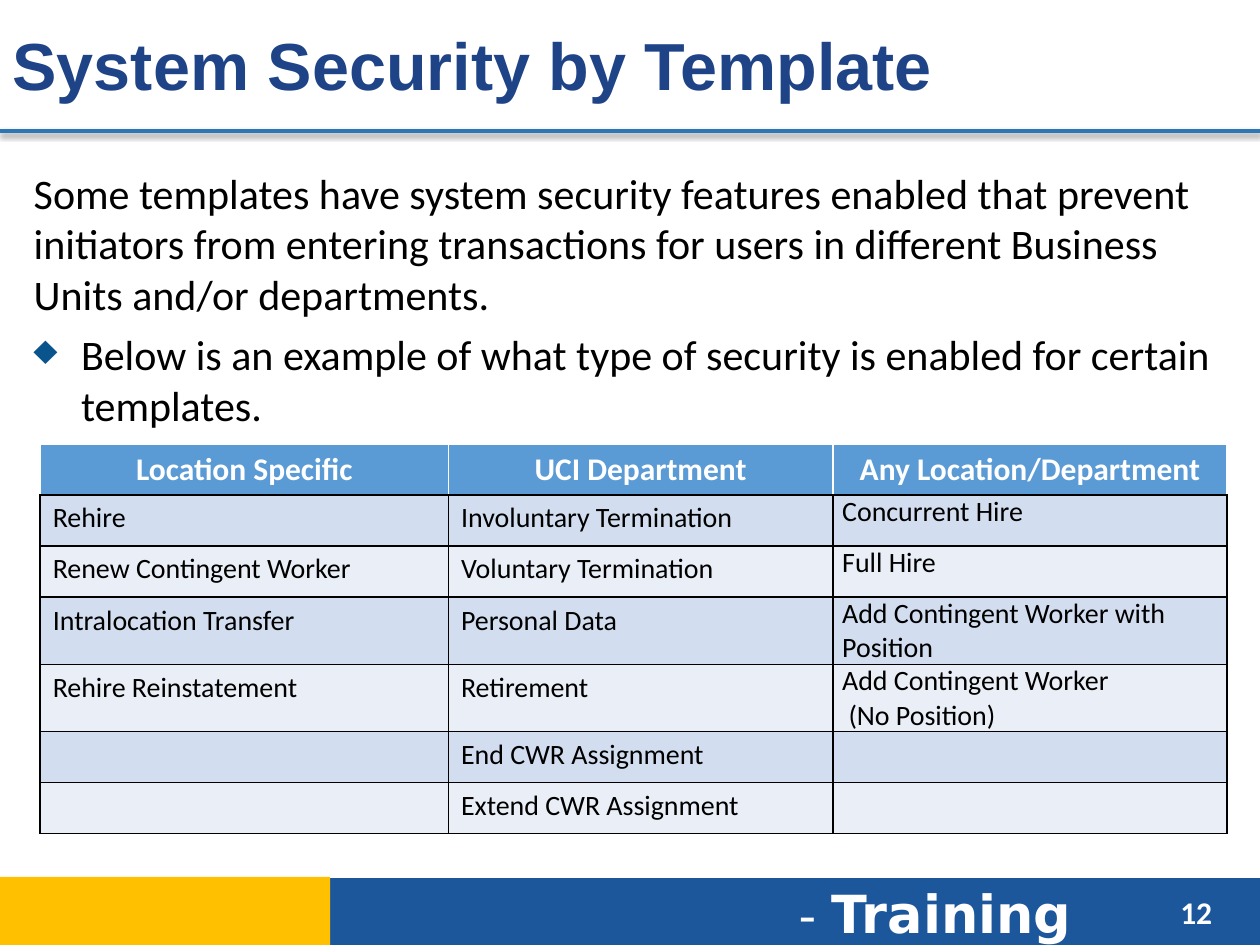
import pptx
import pptx.util
import pptx.dml.color
import pptx.enum.shapes
import pptx.enum.text
import pptx.oxml
import pptx.oxml.ns

Pt = pptx.util.Pt
ALIGN = pptx.enum.text.PP_ALIGN
ANCHOR = pptx.enum.text.MSO_ANCHOR
NS = pptx.oxml.ns.nsdecls("a")

TITLE = "System Security by Template"
INTRO = ("Some templates have system security features enabled that prevent initiators "
         "from entering transactions for users in different Business Units and/or departments.")
EXAMPLE = "Below is an example of what type of security is enabled for certain templates."
BRAND = [("- ", 28, False), ("Training", 30, True)]
PAGE = "12"
HEADERS = ["Location Specific", "UCI Department", "Any Location/Department"]
TEMPLATES = [
    ("Rehire", "Involuntary Termination", "Concurrent Hire"),
    ("Renew Contingent Worker", "Voluntary Termination", "Full Hire"),
    ("Intralocation Transfer", "Personal Data", "Add Contingent Worker with Position"),
    ("Rehire Reinstatement", "Retirement", "Add Contingent Worker\n (No Position)"),
    ("", "End CWR Assignment", ""),
    ("", "Extend CWR Assignment", ""),
]
BANDS = [(188, 501.8, 532, 39.6, "1D579B"), (-0.7, 501.1, 189.4, 39.6, "FFC000")]
COLUMN_WIDTHS = [233.3, 219.6, 225.4]
ROW_HEIGHT = 29.2
STRIPES = ["D2DEEF", "EAEFF7"]


def color(value):
    return pptx.dml.color.RGBColor.from_string(value)


def xml(text):
    return pptx.oxml.parse_xml(text)


def add_run(paragraph, text, size, shade, bold=False, face="Calibri"):
    run = paragraph.add_run()
    run.text = text
    run.font.name = face
    run.font.size = Pt(size)
    run.font.bold = bold
    run.font.color.rgb = color(shade)


def add_textbox(slide, *place):
    frame = slide.shapes.add_textbox(*map(Pt, place)).text_frame
    frame.word_wrap = True
    return frame


def add_band(slide, left, top, width, height, shade):
    band = slide.shapes.add_shape(pptx.enum.shapes.MSO_SHAPE.RECTANGLE,
                                  *map(Pt, (left, top, width, height)))
    band.shadow.inherit = False
    band.fill.solid()
    band.fill.fore_color.rgb = color(shade)
    band.line.fill.background()


def add_rule(slide):
    rule = slide.shapes.add_connector(pptx.enum.shapes.MSO_CONNECTOR.STRAIGHT,
                                      Pt(0), Pt(74.9), Pt(720), Pt(74.9))
    rule.line.color.rgb = color("2E75B6")
    rule.line.width = Pt(2.25)
    rule._element.spPr.append(xml(
        f'<a:effectLst {NS}><a:outerShdw blurRad="{Pt(3.1)}" dist="{Pt(1.6)}" dir="5400000">'
        '<a:srgbClr val="000000"><a:alpha val="38000"/></a:srgbClr>'
        '</a:outerShdw></a:effectLst>'))


def style_cell(cell, fill, edge):
    properties = cell._tc.get_or_add_tcPr()
    for side in ("lnL", "lnR", "lnT", "lnB"):
        shade = "000000" if side == "lnB" else edge
        properties.append(xml(f'<a:{side} {NS} w="{Pt(1)}"><a:solidFill>'
                              f'<a:srgbClr val="{shade}"/></a:solidFill></a:{side}>'))
    cell.fill.solid()
    cell.fill.fore_color.rgb = color(fill)


def add_security_table(slide):
    rows = [HEADERS] + TEMPLATES
    table = slide.shapes.add_table(len(rows), len(HEADERS), Pt(23), Pt(253.6),
                                   Pt(sum(COLUMN_WIDTHS)), Pt(ROW_HEIGHT * len(rows))).table
    for column, width in zip(table.columns, COLUMN_WIDTHS):
        column.width = Pt(width)
    for r, texts in enumerate(rows):
        table.rows[r].height = Pt(ROW_HEIGHT)
        header = r == 0
        for c, text in enumerate(texts):
            cell = table.cell(r, c)
            style_cell(cell, "5B9BD5" if header else STRIPES[(r - 1) % 2],
                       "FFFFFF" if header else "000000")
            paragraph = cell.text_frame.paragraphs[0]
            if header:
                paragraph.alignment = ALIGN.CENTER
            elif c == 2 and text:
                cell.margin_left = cell.margin_right = Pt(5.4)
                cell.margin_top = cell.margin_bottom = Pt(0)
            for i, line in enumerate(text.split("\n") if text else []):
                if i:
                    paragraph.add_line_break()
                add_run(paragraph, line, 18 if header else 16,
                        "FFFFFF" if header else "000000", header)


def add_body(slide):
    body = add_textbox(slide, 12.2, 92.2, 699.1, 135.4)
    add_run(body.paragraphs[0], INTRO, 24, "000000")
    example = body.add_paragraph()
    properties = example._p.get_or_add_pPr()
    properties.set("marL", str(Pt(27)))
    properties.set("indent", str(-Pt(27)))
    properties.append(xml(f'<a:buClr {NS}><a:srgbClr val="09548D"/></a:buClr>'))
    properties.append(xml(f'<a:buChar {NS} char="♦"/>'))
    example.space_before = Pt(5.8)
    add_run(example, EXAMPLE, 24, "000000")


def main():
    deck = pptx.Presentation()
    deck.slide_width, deck.slide_height = Pt(720), Pt(540)
    slide = deck.slides.add_slide(deck.slide_layouts[5])

    title = slide.shapes.title
    title.left, title.top, title.width, title.height = map(Pt, (0, 2.9, 648, 67))
    title.text_frame.vertical_anchor = ANCHOR.MIDDLE
    heading = title.text_frame.paragraphs[0]
    heading.alignment = ALIGN.LEFT
    add_run(heading, TITLE, 38, "1E4386", True, "Arial")

    for band in BANDS:
        add_band(slide, *band)
    add_rule(slide)

    brand = add_textbox(slide, 449.3, 499.7, 201.6, 43.9).paragraphs[0]
    for text, size, bold in BRAND:
        add_run(brand, text, size, "FFFFFF", bold, "DejaVu Sans")
    page = add_textbox(slide, 667.4, 506.9, 43.2, 28.8).paragraphs[0]
    add_run(page, PAGE, 18, "FFFFFF", True)

    add_body(slide)
    add_security_table(slide)
    deck.save("out.pptx")


if __name__ == "__main__":
    main()
